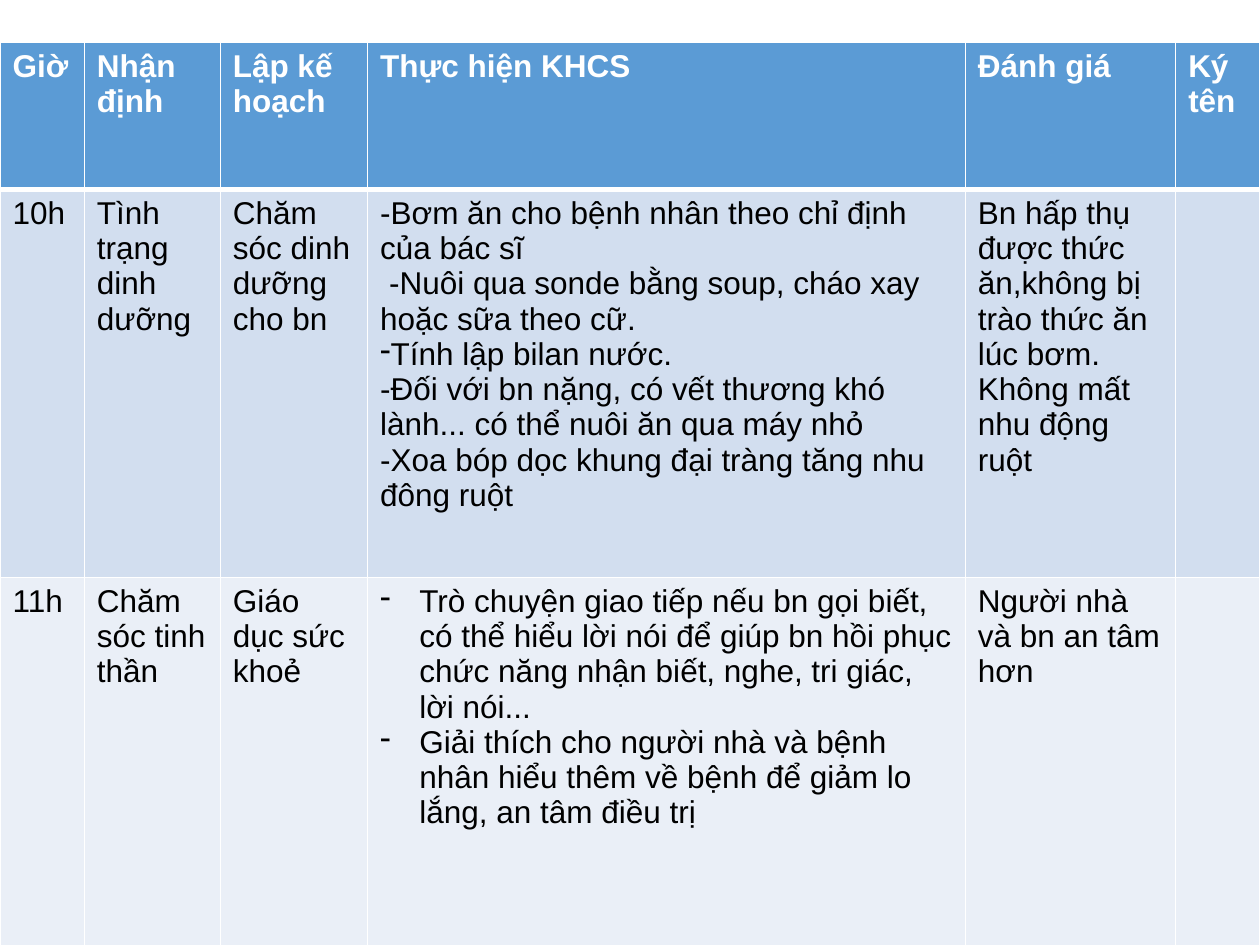
from dataclasses import dataclass

from lxml.etree import SubElement
from pptx import Presentation
from pptx.dml.color import RGBColor
from pptx.oxml.ns import qn
from pptx.util import Cm, Pt


@dataclass(frozen=True)
class Theme:
    font: str = "Arial"
    size: int = 18
    header_text: str = "FFFFFF"
    body_text: str = "000000"
    border: str = "FFFFFF"
    row_fills: tuple = ("5B9BD5", "D2DEEF", "EAEFF7")


def add_borders(cell, widths):
    """Draw the left, right, top and bottom borders, with widths in points."""
    properties = cell._tc.get_or_add_tcPr()
    for side, width in zip("LRTB", widths):
        line = SubElement(properties, qn(f"a:ln{side}"), w=str(Pt(width)))
        fill = SubElement(line, qn("a:solidFill"))
        SubElement(fill, qn("a:srgbClr"), val=theme.border)


def set_list_style(para, left, first_line, bullet):
    properties = para._p.get_or_add_pPr()
    properties.set("marL", str(Cm(left)))
    properties.set("indent", str(Cm(first_line)))
    if bullet:
        SubElement(properties, qn("a:buFontTx"))
        SubElement(properties, qn("a:buChar"), char=bullet)


theme = Theme()
column_widths = [1.7, 2.74, 2.97, 12.05, 4.24, 1.7]
row_heights = [2.97, 7.82, 7.44]
care_plan = [
    ["Giờ", "Nhận định", "Lập kế hoạch", "Thực hiện KHCS", "Đánh giá", "Ký tên"],
    [
        "10h",
        "Tình trạng dinh dưỡng",
        "Chăm sóc dinh dưỡng cho bn",
        "-Bơm ăn cho bệnh nhân theo chỉ định của bác sĩ\n"
        "-Nuôi qua sonde bằng soup, cháo xay hoặc sữa theo cữ.\n"
        "Tính lập bilan nước.\n"
        "-Đối với bn nặng, có vết thương khó lành... có thể nuôi ăn qua máy nhỏ\n"
        "-Xoa bóp dọc khung đại tràng tăng nhu đông ruột",
        "Bn hấp thụ được thức ăn,không bị trào thức ăn lúc bơm. Không mất nhu động ruột",
        "",
    ],
    [
        "11h",
        "Chăm sóc tinh thần",
        "Giáo dục sức khoẻ",
        "Trò chuyện giao tiếp nếu bn gọi biết, có thể hiểu lời nói để giúp bn "
        "hồi phục chức năng nhận biết, nghe, tri giác, lời nói...\n"
        "Giải thích cho người nhà và bệnh nhân hiểu thêm về bệnh để giảm lo lắng, "
        "an tâm điều trị",
        "Người nhà và bn an tâm hơn",
        "",
    ],
]

deck = Presentation()
deck.slide_width, deck.slide_height = Cm(25.4), Cm(19.05)
page = deck.slides.add_slide(deck.slide_layouts[6])

table = page.shapes.add_table(
    len(row_heights), len(column_widths),
    Cm(0), Cm(0.85), Cm(sum(column_widths)), Cm(sum(row_heights)),
).table
for column, width in zip(table.columns, column_widths):
    column.width = Cm(width)
for row, height in zip(table.rows, row_heights):
    row.height = Cm(height)

for row_index, texts in enumerate(care_plan):
    is_header = row_index == 0
    top = 3 if row_index == 1 else 1
    bottom = 3 if is_header else 1
    color = theme.header_text if is_header else theme.body_text
    for column_index, text in enumerate(texts):
        cell = table.cell(row_index, column_index)
        add_borders(cell, (1, 1, top, bottom))
        cell.fill.solid()
        cell.fill.fore_color.rgb = RGBColor.from_string(theme.row_fills[row_index])
        cell.text_frame.text = text
        for para in cell.text_frame.paragraphs:
            for span in para.runs:
                span.font.name = theme.font
                span.font.size = Pt(theme.size)
                span.font.bold = is_header
                span.font.color.rgb = RGBColor.from_string(color)

feeding_steps = table.cell(1, 3).text_frame.paragraphs
set_list_style(feeding_steps[1], 0, 0.18, None)
set_list_style(feeding_steps[2], 0, 0, "-")
for para in table.cell(2, 3).text_frame.paragraphs:
    set_list_style(para, 0.79, -0.79, "-")

deck.save("out.pptx")
